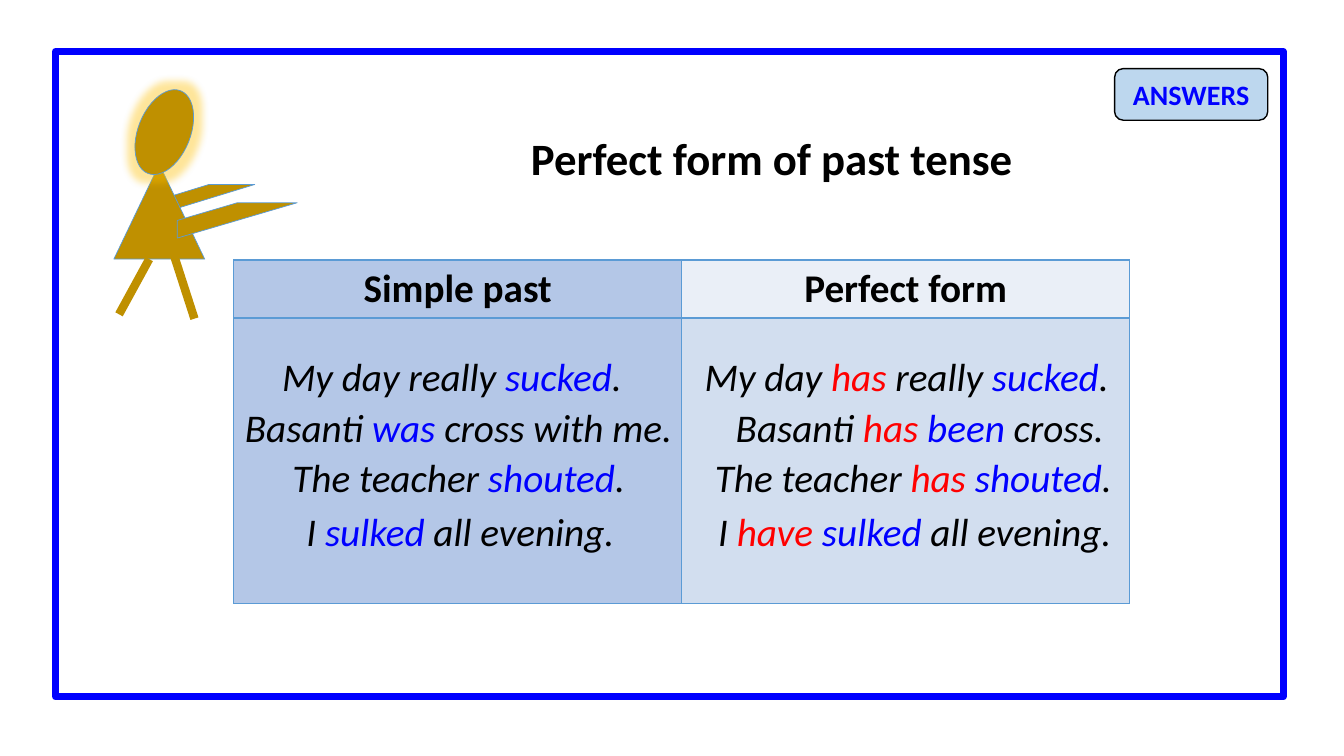
from lxml.etree import SubElement
from pptx import Presentation
from pptx.dml.color import RGBColor
from pptx.enum.shapes import MSO_CONNECTOR, MSO_SHAPE
from pptx.enum.text import MSO_ANCHOR, MSO_AUTO_SIZE, PP_ALIGN
from pptx.oxml import parse_xml
from pptx.oxml.ns import nsdecls, qn
from pptx.util import Cm, Pt

COLORS = {
    "text": "000000", "verb": "0000FF", "auxiliary": "FF0000",
    "frame": "0000FF", "button": "BDD7EE", "outline": "5B9BD5",
    "figure": "BF9000", "glow": "FFC000",
    "left": "B4C7E7", "right_head": "EAEFF7", "right_body": "D2DEEF",
}
HEADING = {"name": "Calibri", "size": Pt(28), "bold": True}
SENTENCE = {"name": "Calibri", "size": Pt(28), "italic": True}
TITLE = {"name": "Calibri", "size": Pt(32), "bold": True}
BUTTON = {"name": "Calibri", "size": Pt(20), "bold": True}


def write(tf, parts, style):
    """Write one centred line from (text, colour name) parts."""
    p = tf.paragraphs[0]
    p.alignment = PP_ALIGN.CENTER
    for text, color in parts:
        r = p.add_run()
        r.text = text
        for key, value in style.items():
            setattr(r.font, key, value)
        r.font.color.rgb = RGBColor.from_string(COLORS[color])


def draw(shapes, kind, box, fill, line, width):
    sp = shapes.add_shape(kind, *map(Cm, box))
    sp.shadow.inherit = False
    if fill:
        sp.fill.solid()
        sp.fill.fore_color.rgb = RGBColor.from_string(COLORS[fill])
    else:
        sp.fill.background()
    sp.line.color.rgb = RGBColor.from_string(COLORS[line])
    sp.line.width = Pt(width)
    return sp


prs = Presentation()
prs.slide_width, prs.slide_height = Cm(33.87), Cm(19.05)
s = prs.slides.add_slide(prs.slide_layouts[6])

draw(s.shapes, MSO_SHAPE.RECTANGLE, (1.4, 1.3, 30.94, 16.26), None, "frame", 5)

# Table
row_heights = (1.45, 7.19)
table = s.shapes.add_table(2, 2, Cm(5.89), Cm(6.55), Cm(22.58), Cm(sum(row_heights))).table
for row, height in zip(table.rows, row_heights):
    row.height = Cm(height)
for column in table.columns:
    column.width = Cm(11.29)
for cell, fill in zip(table.iter_cells(), ("left", "right_head", "left", "right_body")):
    for side in ("lnL", "lnR", "lnT", "lnB"):
        cell._tc.get_or_add_tcPr().append(parse_xml(
            f'<a:{side} {nsdecls("a")} w="12700"><a:solidFill>'
            f'<a:srgbClr val="{COLORS["outline"]}"/></a:solidFill></a:{side}>'))
    cell.fill.solid()
    cell.fill.fore_color.rgb = RGBColor.from_string(COLORS[fill])
for column, heading in enumerate(("Simple past", "Perfect form")):
    write(table.cell(0, column).text_frame, [(heading, "text")], HEADING)

# Title and sentences: left, top, width, height, style, parts
lines = [
    (7.62, 3.18, 23.93, 1.63, TITLE, [("Perfect form of past tense ", "text")]),
]
sentences = [
    (8.76, 5.89, 11, [("My day really ", "text"), ("sucked", "verb"), (".", "text")],
     17.35, [("My day ", "text"), ("has ", "auxiliary"), ("really", "text"),
             (" sucked", "verb"), (".", "text")]),
    (10.03, 5.89, 11.33, [("Basanti ", "text"), ("was", "verb"), (" cross with me.", "text")],
     17.68, [("Basanti ", "text"), ("has", "auxiliary"), (" been", "verb"), (" cross.", "text")]),
    (11.3, 6.17, 11, [("The teacher ", "text"), ("shouted", "verb"), (". ", "text")],
     17.63, [("The teacher ", "text"), ("has", "auxiliary"), (" shouted", "verb"), (". ", "text")]),
    (12.67, 6.1, 11, [("I ", "text"), ("sulked", "verb"), (" all evening.", "text")],
     17.55, [("I ", "text"), ("have", "auxiliary"), (" sulked", "verb"), (" all evening.", "text")]),
]
for top, past_left, past_width, past, perfect_left, perfect in sentences:
    lines.append((past_left, top, past_width, 1.45, SENTENCE, past))
    lines.append((perfect_left, top, 11, 1.45, SENTENCE, perfect))
for *box, style, parts in lines:
    tf = s.shapes.add_textbox(*map(Cm, box)).text_frame
    tf.word_wrap = True
    tf.auto_size = MSO_AUTO_SIZE.SHAPE_TO_FIT_TEXT
    write(tf, parts, style)

# Answers button
button = draw(s.shapes, MSO_SHAPE.ROUNDED_RECTANGLE, (28.09, 1.73, 3.86, 1.3), "button", "text", 1)
button.text_frame.vertical_anchor = MSO_ANCHOR.MIDDLE
write(button.text_frame, [("ANSWERS", "verb")], BUTTON)

# Stick figure
figure = s.shapes.add_group_shape().shapes
body_parts = [
    (MSO_SHAPE.DIAGONAL_STRIPE, (4.11, 4.65, 2.31, 0.71)),
    (MSO_SHAPE.ISOSCELES_TRIANGLE, (2.87, 4.14, 2.29, 2.39)),
    (MSO_SHAPE.OVAL, (3.48, 2.21, 1.32, 2.24)),
    (MSO_SHAPE.DIAGONAL_STRIPE, (4.47, 5.11, 3.02, 0.89)),
]
for kind, box in body_parts:
    sp = draw(figure, kind, box, "figure", "outline", 0.5)
    if kind == MSO_SHAPE.OVAL:
        sp.rotation = 21.6
        glow = SubElement(sp._element.spPr.find(qn("a:effectLst")), qn("a:glow"), rad=str(Pt(11)))
        color = SubElement(glow, qn("a:srgbClr"), val=COLORS["glow"])
        SubElement(color, qn("a:alpha"), val="40000")
for leg in ((3.76, 6.53, 3, 7.92), (4.39, 6.45, 4.9, 8.03)):
    line = figure.add_connector(MSO_CONNECTOR.STRAIGHT, *map(Cm, leg))
    line.line.color.rgb = RGBColor.from_string(COLORS["figure"])
    line.line.width = Pt(6)
    SubElement(line._element.spPr, qn("a:effectLst"))

prs.save("out.pptx")
